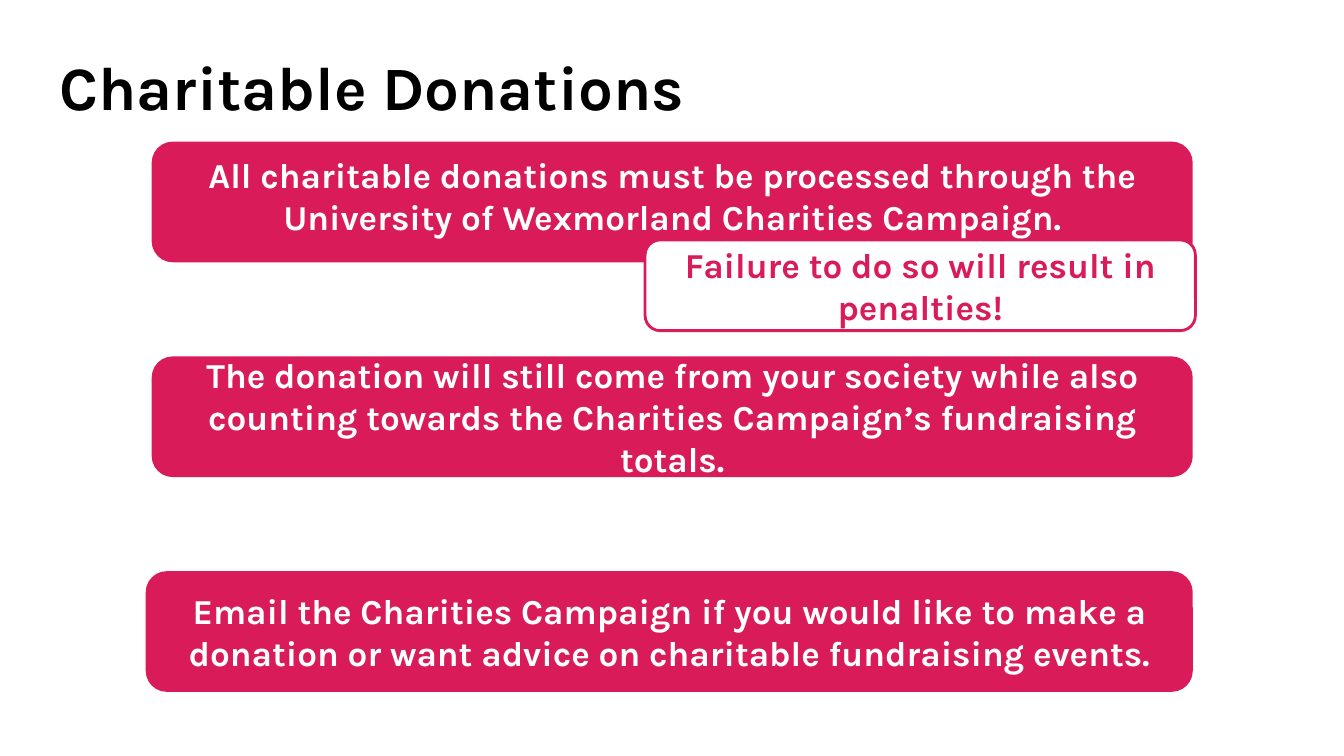
from pptx import Presentation
from pptx.dml.color import RGBColor
from pptx.enum.shapes import MSO_SHAPE
from pptx.enum.text import MSO_ANCHOR, MSO_AUTO_SIZE, PP_ALIGN
from pptx.util import Pt

PINK = RGBColor(0xD9, 0x1B, 0x5A)
WHITE = RGBColor(0xFF, 0xFF, 0xFF)
BLACK = RGBColor(0, 0, 0)
TOP, MID = MSO_ANCHOR.TOP, MSO_ANCHOR.MIDDLE


def style(frame, text, size, ink, align):
    frame.text = text
    frame.word_wrap = True
    para = frame.paragraphs[0]
    para.alignment = align
    font = para.runs[0].font
    font.color.rgb = ink
    looks = {"name": "Karla", "size": Pt(size), "bold": True}
    for key, value in looks.items():
        setattr(font, key, value)
    return para


deck = Presentation()
deck.slide_width, deck.slide_height = Pt(960), Pt(540)
slide = deck.slides.add_slide(deck.slide_layouts[5])

title = slide.shapes.title
place = {"left": Pt(35.3), "top": Pt(12.2), "width": Pt(538.6), "height": Pt(104.4)}
for key, value in place.items():
    setattr(title, key, value)
head = style(title.text_frame, "Charitable Donations", 44, BLACK, PP_ALIGN.LEFT)
head.line_spacing = 0.9
title.text_frame.vertical_anchor = MID
title.text_frame.auto_size = MSO_AUTO_SIZE.NONE

first, step, high, right = 102.2, 153.4, 84.2, 851
cards = [
    (109.4, TOP, "All charitable donations must be processed through the University of Wexmorland Charities Campaign."),
    (109.4, MID, "The donation will still come from your society while also counting towards the Charities Campaign’s fundraising totals."),
    (105.1, MID, "Email the Charities Campaign if you would like to make a donation or want advice on charitable fundraising events."),
]
boxes = [
    (left, first + row * step, right - left, high, PINK, WHITE, anchor, text)
    for row, (left, anchor, text) in enumerate(cards)
]
boxes.append((460.8, 171.4, 393.1, 64.8, WHITE, PINK, MID, "Failure to do so will result in penalties!"))

for left, top, width, height, fill, ink, anchor, text in boxes:
    box = slide.shapes.add_shape(
        MSO_SHAPE.ROUNDED_RECTANGLE, Pt(left), Pt(top), Pt(width), Pt(height)
    )
    box.shadow.inherit = False
    box.fill.solid()
    box.fill.fore_color.rgb = fill
    box.line.color.rgb = PINK
    box.line.width = Pt(2)
    style(box.text_frame, text, 25, ink, PP_ALIGN.CENTER)
    box.text_frame.vertical_anchor = anchor

deck.save("out.pptx")
